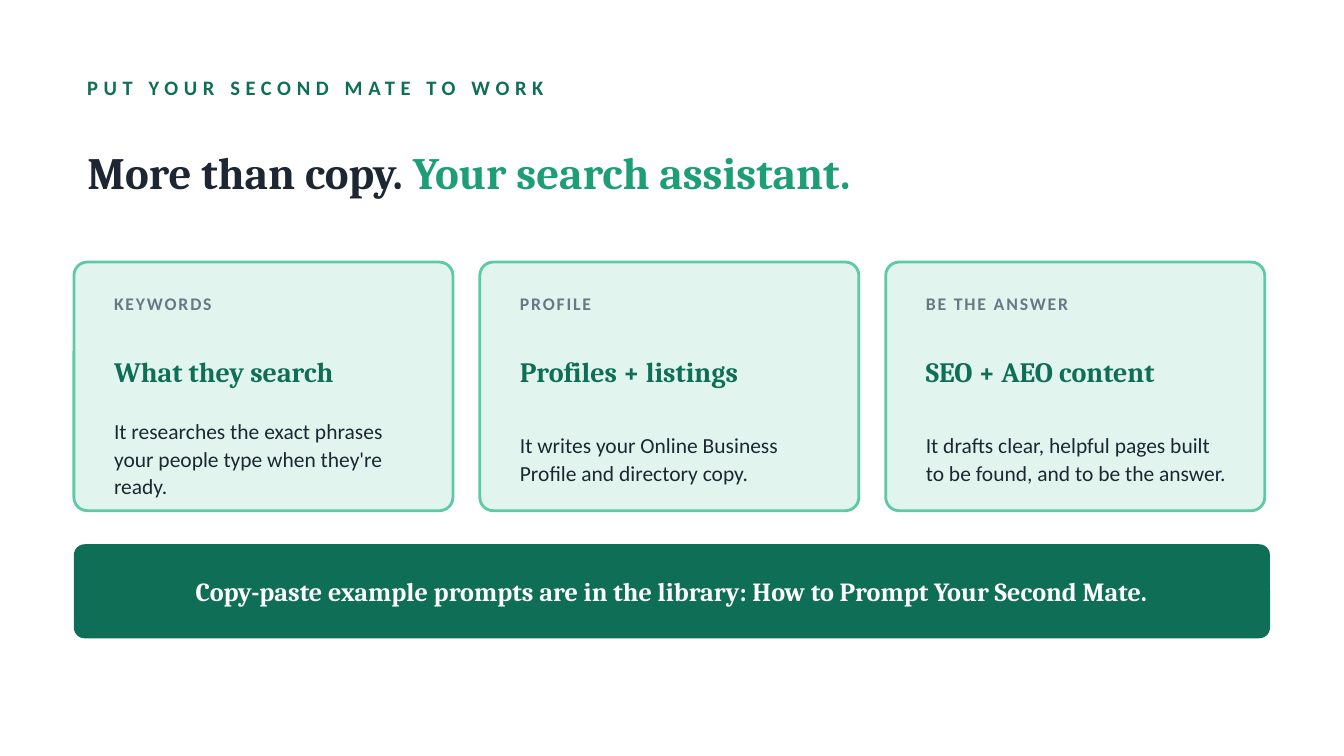
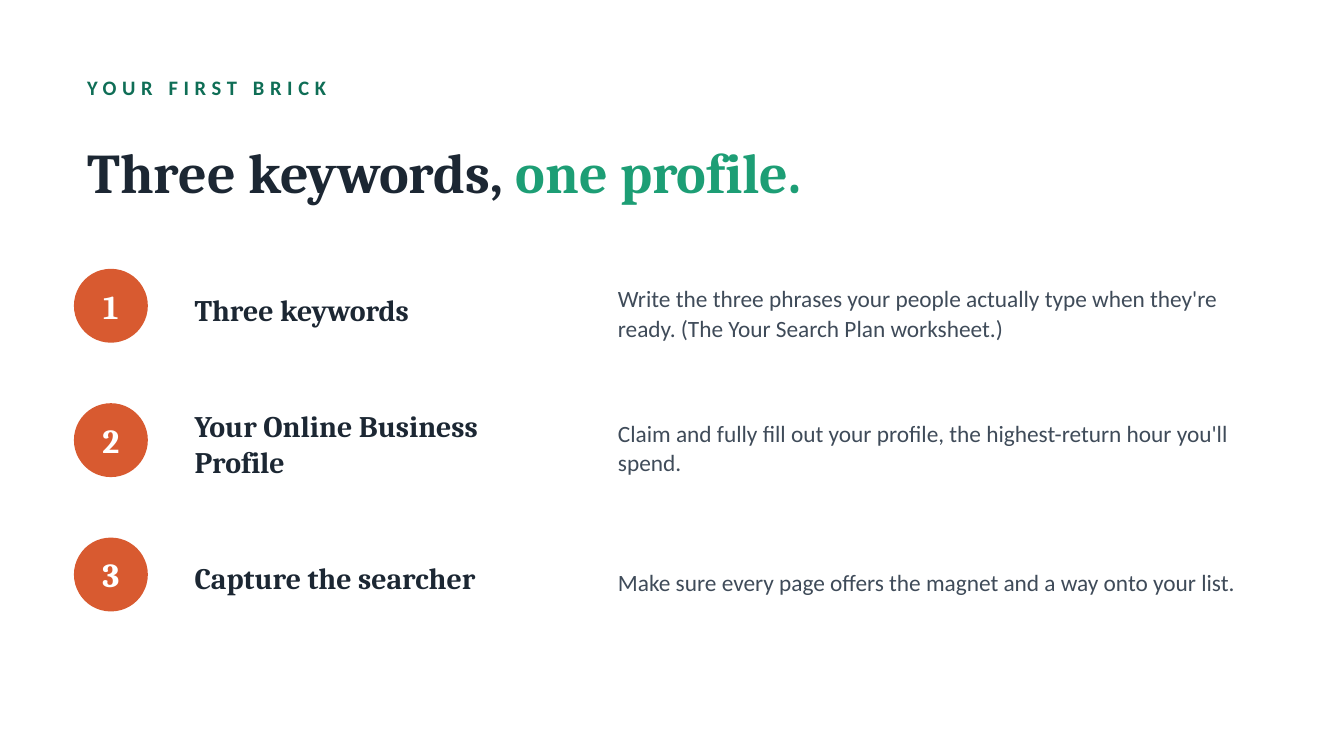
import pptx
import pptx.dml.color
import pptx.enum.shapes
import pptx.enum.text
import pptx.util

Inches = pptx.util.Inches
RGBColor = pptx.dml.color.RGBColor
Shapes = pptx.enum.shapes.MSO_SHAPE
Align = pptx.enum.text.PP_ALIGN

INK = RGBColor(0x1C, 0x27, 0x33)
SLATE = RGBColor(0x3F, 0x4B, 0x59)
GREY = RGBColor(0x6B, 0x77, 0x85)
DEEP_GREEN = RGBColor(0x0F, 0x6E, 0x56)
GREEN = RGBColor(0x1D, 0x9E, 0x75)
MINT = RGBColor(0x5D, 0xCA, 0xA5)
PALE_MINT = RGBColor(0xE1, 0xF5, 0xEE)
ORANGE = RGBColor(0xD8, 0x5A, 0x30)
WHITE = RGBColor(0xFF, 0xFF, 0xFF)

SERIF, SANS = "Cambria", "Calibri"
SLIDE_WIDTH = 10
LEFT, CONTENT_WIDTH = 0.55, 8.9

ASSISTANT = {
    "kicker": "PUT YOUR SECOND MATE TO WORK",
    "title": ("More than copy. ", "Your search assistant."),
    "title_size": 24,
    "cards": [
        ("KEYWORDS", "What they search",
         "It researches the exact phrases your people type when they're ready."),
        ("PROFILE", "Profiles + listings",
         "It writes your Online Business Profile and directory copy."),
        ("BE THE ANSWER", "SEO + AEO content",
         "It drafts clear, helpful pages built to be found, and to be the answer."),
    ],
    "banner": "Copy-paste example prompts are in the library: "
              "How to Prompt Your Second Mate.",
}
FIRST_BRICK = {
    "kicker": "YOUR FIRST BRICK",
    "title": ("Three keywords, ", "one profile."),
    "title_size": 30,
    "steps": [
        ("Three keywords",
         "Write the three phrases your people actually type when they're ready. "
         "(The Your Search Plan worksheet.)"),
        ("Your Online Business Profile",
         "Claim and fully fill out your profile, the highest-return hour you'll spend."),
        ("Capture the searcher",
         "Make sure every page offers the magnet and a way onto your list."),
    ],
}


def style_run(run, font_name, size, color, bold=False, tracking=0):
    """Format a run; tracking is the extra letter spacing in points."""
    run.font.name = font_name
    run.font.size = pptx.util.Pt(size)
    run.font.color.rgb = color
    run.font.bold = bold
    if tracking:
        run.font._element.set("spc", str(tracking * 100))


def prepare_frame(text_frame):
    text_frame.word_wrap = True
    text_frame.auto_size = pptx.enum.text.MSO_AUTO_SIZE.NONE
    text_frame.vertical_anchor = pptx.enum.text.MSO_ANCHOR.MIDDLE


def add_text(slide, text, box, *style, line_spacing=None, **options):
    text_frame = slide.shapes.add_textbox(*map(Inches, box)).text_frame
    prepare_frame(text_frame)
    paragraph = text_frame.paragraphs[0]
    paragraph.text = text
    paragraph.line_spacing = line_spacing
    style_run(paragraph.runs[0], *style, **options)


def add_panel(slide, kind, box, fill, line=None, radius=None, label=None, label_size=None):
    """Add a filled shape, optionally outlined, rounded (inches) and labelled in white."""
    shape = slide.shapes.add_shape(kind, *map(Inches, box))
    shape.shadow.inherit = False
    shape.fill.solid()
    shape.fill.fore_color.rgb = fill
    if line is None:
        shape.line.fill.background()
    else:
        shape.line.color.rgb = line
        shape.line.width = pptx.util.Pt(1.5)
    if radius is not None:
        shape.adjustments[0] = radius / min(box[2:])
    if label is not None:
        text_frame = shape.text_frame
        prepare_frame(text_frame)
        text_frame.margin_left = text_frame.margin_right = 0
        text_frame.margin_top = text_frame.margin_bottom = 0
        paragraph = text_frame.paragraphs[0]
        paragraph.text = label
        paragraph.alignment = Align.CENTER
        style_run(paragraph.runs[0], SERIF, label_size, WHITE, bold=True)


def start_slide(presentation, content):
    """Add a slide with the kicker and two-colour title that all slides share."""
    slide = presentation.slides.add_slide(presentation.slide_layouts[5])
    add_text(slide, content["kicker"], (LEFT, 0.5, CONTENT_WIDTH, 0.3),
             SANS, 11, DEEP_GREEN, bold=True, tracking=3)
    title = slide.shapes.title
    title.left, title.top = Inches(LEFT), Inches(0.85)
    title.width, title.height = Inches(CONTENT_WIDTH), Inches(0.85)
    prepare_frame(title.text_frame)
    paragraph = title.text_frame.paragraphs[0]
    paragraph.alignment = Align.LEFT
    for text, color in zip(content["title"], (INK, GREEN)):
        run = paragraph.add_run()
        run.text = text
        style_run(run, SERIF, content["title_size"], color, bold=True)
    return slide


def build_assistant_slide(presentation):
    slide = start_slide(presentation, ASSISTANT)
    top, width, height, gap = 1.95, 2.82, 1.85, 0.2
    text_width = 2.45
    for index, (tag, heading, body) in enumerate(ASSISTANT["cards"]):
        left = LEFT + index * (width + gap)
        text_left = left + 0.2
        add_panel(slide, Shapes.ROUNDED_RECTANGLE, (left, top, width, height),
                  PALE_MINT, line=MINT, radius=0.1)
        add_text(slide, tag, (text_left, top + 0.16, text_width, 0.3),
                 SANS, 9.5, GREY, bold=True, tracking=1)
        add_text(slide, heading, (text_left, top + 0.46, text_width, 0.7),
                 SERIF, 15, DEEP_GREEN, bold=True)
        add_text(slide, body, (text_left, top + 1.18, text_width, 0.55),
                 SANS, 11.5, INK, line_spacing=1.08)
    add_panel(slide, Shapes.ROUNDED_RECTANGLE, (LEFT, 4.05, CONTENT_WIDTH, 0.7),
              DEEP_GREEN, radius=0.08, label=ASSISTANT["banner"], label_size=14)


def build_first_brick_slide(presentation):
    slide = start_slide(presentation, FIRST_BRICK)
    first_top, pitch, diameter = 1.95, 1, 0.55
    for index, (heading, body) in enumerate(FIRST_BRICK["steps"]):
        top = first_top + index * pitch
        add_panel(slide, Shapes.OVAL, (LEFT, top + 0.05, diameter, diameter),
                  ORANGE, label=str(index + 1), label_size=18)
        add_text(slide, heading, (1.35, top, 3, 0.7), SERIF, 16, INK, bold=True)
        add_text(slide, body, (4.5, top, 5, 0.75), SANS, 12.5, SLATE, line_spacing=1.05)


def main():
    presentation = pptx.Presentation()
    presentation.slide_width = Inches(SLIDE_WIDTH)
    presentation.slide_height = Inches(SLIDE_WIDTH * 9 / 16)
    build_assistant_slide(presentation)
    build_first_brick_slide(presentation)
    presentation.save("out.pptx")


if __name__ == "__main__":
    main()
